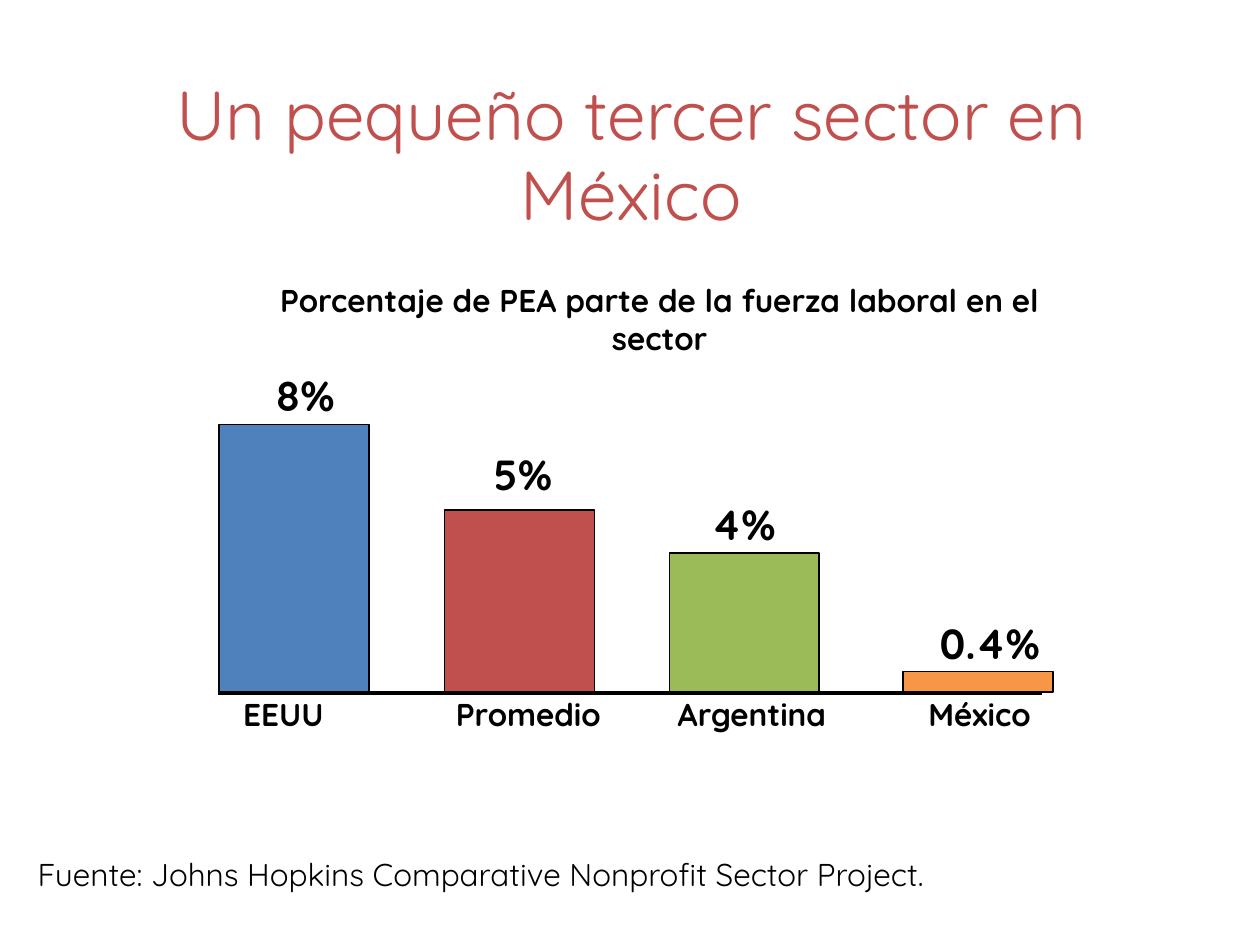
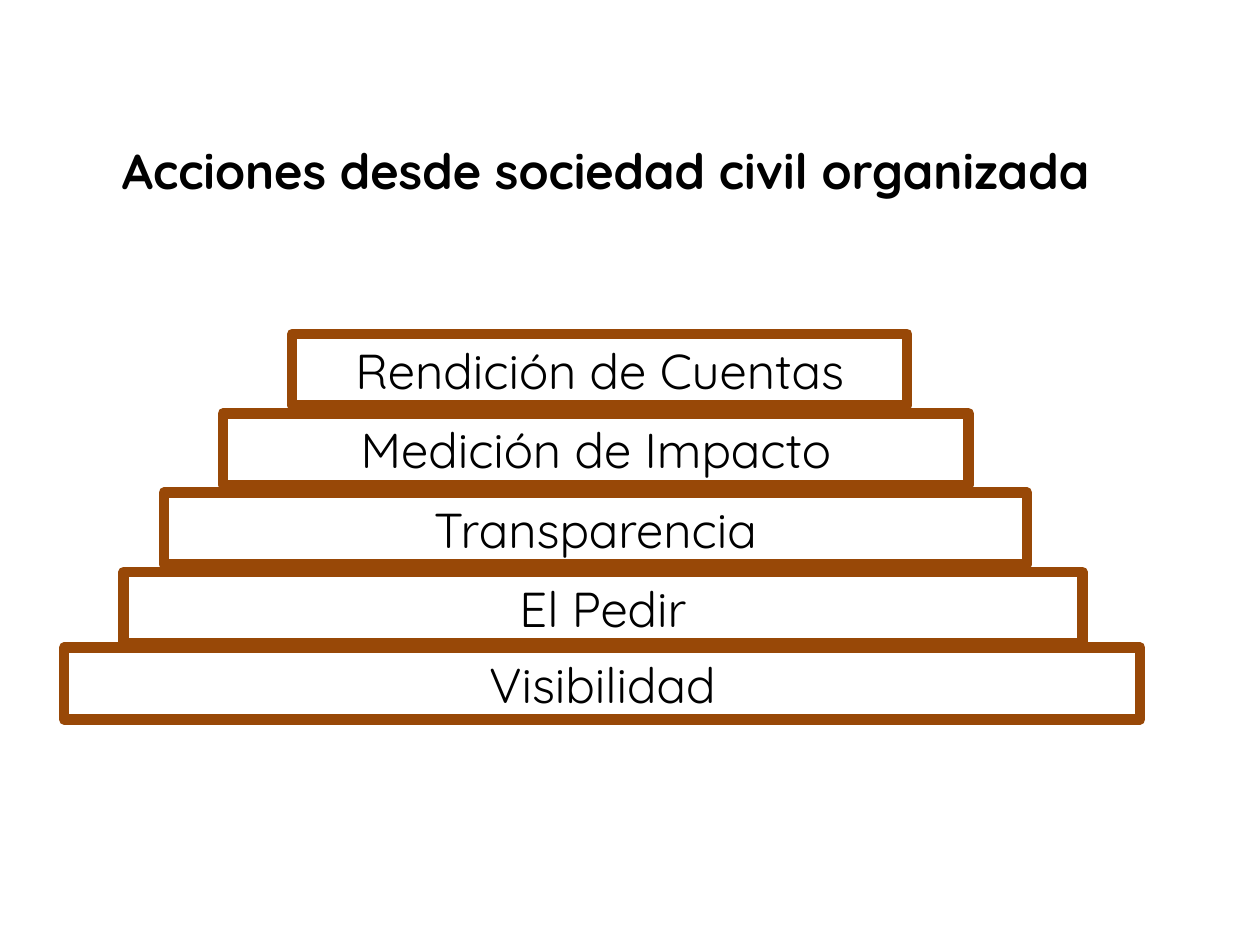
from dataclasses import dataclass

from lxml.etree import SubElement
from pptx import Presentation
from pptx.dml.color import RGBColor
from pptx.enum.shapes import MSO_CONNECTOR, MSO_SHAPE
from pptx.enum.text import MSO_ANCHOR, PP_ALIGN
from pptx.oxml.ns import qn
from pptx.util import Pt


@dataclass(frozen=True)
class Theme:
    font: str = "Quicksand"
    ink: str = "000000"
    blue: str = "4F81BD"
    red: str = "C0504D"
    green: str = "9BBB59"
    orange: str = "F79646"
    brown: str = "984807"
    title_size: float = 39.6
    heading_size: float = 28
    value_size: float = 24
    label_size: float = 18


THEME = Theme()


def write(frame, text, *, size, color=THEME.ink, bold=False,
          align=PP_ALIGN.LEFT, anchor=MSO_ANCHOR.TOP, spacing=None):
    frame.word_wrap = True
    frame.vertical_anchor = anchor
    paragraph = frame.paragraphs[0]
    paragraph.alignment = align
    if spacing:
        paragraph.line_spacing = spacing
    run = paragraph.add_run()
    run.text = text
    run.font.name = THEME.font
    run.font.size = Pt(size)
    run.font.bold = bold
    run.font.color.rgb = RGBColor.from_string(color)


class Deck:
    def __init__(self, theme, width, height):
        self.theme = theme
        self.presentation = Presentation()
        self.presentation.slide_width = Pt(width)
        self.presentation.slide_height = Pt(height)
        self.slide = None

    def new_slide(self):
        blank = self.presentation.slide_layouts[6]
        self.slide = self.presentation.slides.add_slide(blank)

    def text(self, text, left, top, width, height, **style):
        box = self.slide.shapes.add_textbox(Pt(left), Pt(top), Pt(width), Pt(height))
        write(box.text_frame, text, **style)

    def rectangle(self, left, top, width, height, *, line, weight, fill=None):
        block = self.slide.shapes.add_shape(
            MSO_SHAPE.RECTANGLE, Pt(left), Pt(top), Pt(width), Pt(height))
        block.shadow.inherit = False
        if fill:
            block.fill.solid()
            block.fill.fore_color.rgb = RGBColor.from_string(fill)
        else:
            block.fill.background()
        block.line.color.rgb = RGBColor.from_string(line)
        block.line.width = Pt(weight)
        return block

    def line(self, x1, y1, x2, y2, *, color, weight):
        rule = self.slide.shapes.add_connector(
            MSO_CONNECTOR.STRAIGHT, Pt(x1), Pt(y1), Pt(x2), Pt(y2))
        rule.line.color.rgb = RGBColor.from_string(color)
        rule.line.width = Pt(weight)
        SubElement(rule.element.spPr, qn("a:effectLst"))


def build_sector_slide(deck):
    theme = deck.theme
    baseline, bar_width = 395.6, 85.7
    countries = [
        ("EEUU", "8%", theme.blue, 125.3, 242.6, (150.5, 207.4), 131.8),
        ("Promedio", "5%", theme.red, 254, 291.6, (275, 252.7), 253.4),
        ("Argentina", "4%", theme.green, 382.5, 316.1, (399.6, 281.5), 380.2),
        ("México", "0.4%", theme.orange, 516, 383.8, (529.9, 349.2), 523.4),
    ]
    deck.new_slide()
    deck.text("Porcentaje de PEA parte de la fuerza laboral en el sector",
              150.5, 157, 452.9, 50.4, size=theme.label_size, bold=True,
              align=PP_ALIGN.CENTER)
    for _, _, color, left, top, _, _ in countries:
        deck.rectangle(left, top, bar_width, baseline - top,
                       fill=color, line=theme.ink, weight=1)
    deck.line(124.6, 396, 595.4, 396, color=theme.ink, weight=2.25)
    for country, share, _, _, _, (share_left, share_top), name_left in countries:
        deck.text(share, share_left, share_top, 75, 36,
                  size=theme.value_size, bold=True)
        deck.text(country, name_left, 393.8, 105, 29,
                  size=theme.label_size, bold=True)
    deck.text("Fuente: Johns Hopkins Comparative Nonprofit Sector Project.",
              14.4, 485.3, 556, 29, size=theme.label_size)
    deck.text("Un pequeño tercer sector en México", 36.7, 44.5, 648, 90,
              size=theme.title_size, color=theme.red, align=PP_ALIGN.CENTER,
              anchor=MSO_ANCHOR.MIDDLE, spacing=0.96)


def build_actions_slide(deck):
    theme = deck.theme
    steps = [
        ("Visibilidad", 36.7, 370.1, 614.9),
        ("El Pedir", 70.6, 326.9, 547.9),
        ("Transparencia", 93.6, 281.5, 493.2),
        ("Medición de Impacto", 127.4, 236.2, 426.2),
        ("Rendición de Cuentas", 167, 190.8, 351.4),
    ]
    deck.new_slide()
    for action, left, top, width in steps:
        step = deck.rectangle(left, top, width, 41, line=theme.brown, weight=6)
        write(step.text_frame, action, size=theme.heading_size,
              align=PP_ALIGN.CENTER, anchor=MSO_ANCHOR.MIDDLE)
    deck.text("Acciones desde sociedad civil organizada", 42.5, 77, 607, 41,
              size=theme.heading_size, bold=True, align=PP_ALIGN.CENTER)


def main():
    deck = Deck(THEME, 720, 540)
    build_sector_slide(deck)
    build_actions_slide(deck)
    deck.presentation.save("out.pptx")


if __name__ == "__main__":
    main()
